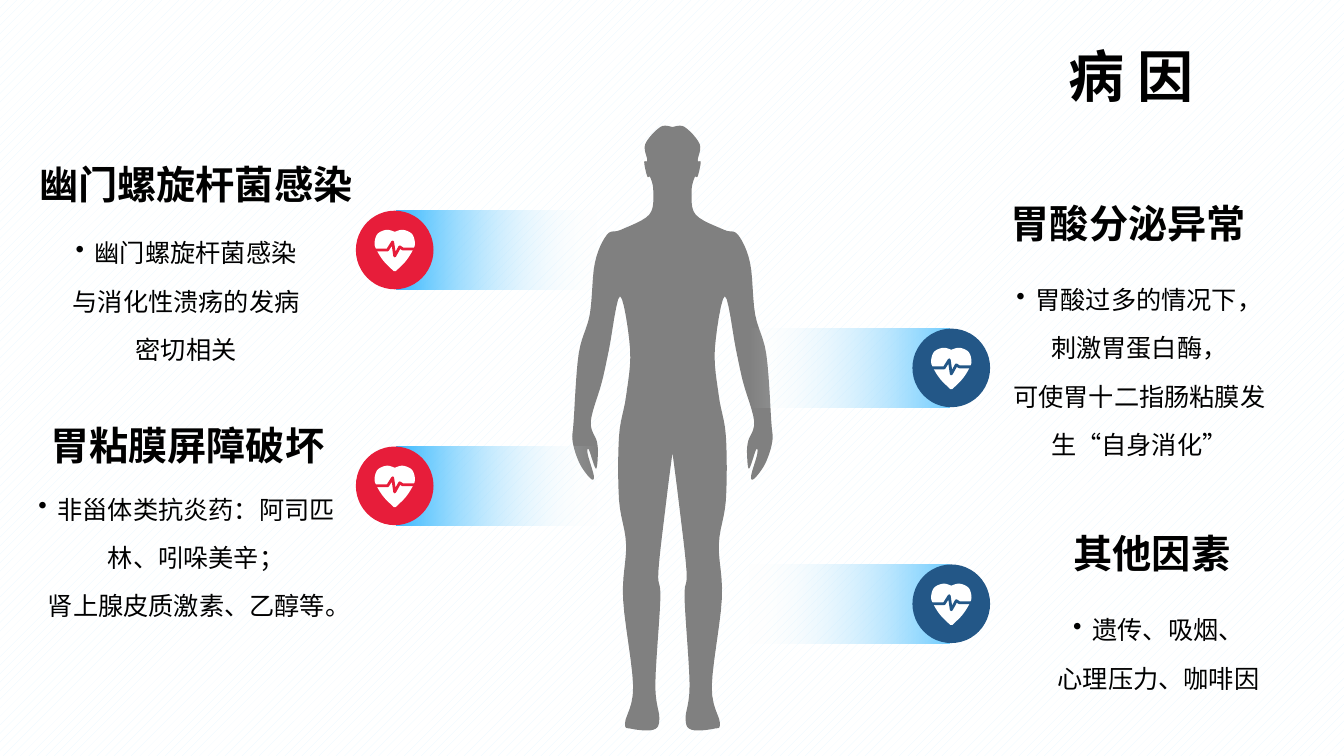
from pptx import Presentation
from pptx.dml.color import RGBColor
from pptx.enum.dml import MSO_PATTERN
from pptx.enum.shapes import MSO_SHAPE
from pptx.enum.text import MSO_ANCHOR, MSO_AUTO_SIZE, PP_ALIGN
from pptx.oxml.ns import qn
from pptx.util import Inches, Pt
from lxml import etree

RECT, OVAL = MSO_SHAPE.RECTANGLE, MSO_SHAPE.OVAL
TOP, BOTTOM = MSO_ANCHOR.TOP, MSO_ANCHOR.BOTTOM
LEFT, CENTER = PP_ALIGN.LEFT, PP_ALIGN.CENTER
CJK = "Noto Sans CJK SC"
COLORS = {"dots": "E7F7FF", "white": "FFFFFF", "text": "000000", "body": "808080",
          "left": "E71D3A", "right": "235787", "glow_left": "38B9FF",
          "glow_right": "71CDFF"}

# Right halves of symmetric outlines, in hundredths of an inch from the axis
HALF_FIGURE = [
    (0, 2), (12, 2), (27, 19), (25, 35), (28, 37), (25, 51), (22, 52), (19, 66),
    (23, 89), (51, 104), (65, 109), (77, 137), (82, 188), (93, 227), (98, 294),
    (99, 314), (92, 336), (81, 351), (78, 348), (84, 327), (83, 322), (76, 341),
    (74, 327), (75, 314), (81, 294), (70, 255), (63, 223), (52, 170), (42, 223),
    (46, 269), (53, 309), (53, 372), (46, 416), (49, 470), (39, 557), (47, 593),
    (41, 599), (19, 600), (13, 589), (17, 555), (12, 470), (14, 443), (6, 372),
    (0, 325)]
HALF_HEART = [(0, 2), (8, 0), (17, 4), (20, 13), (18, 20), (11, 31), (1, 41)]
PULSE = [(-20, 20), (-7, 20), (-2, 12), (0, 26), (5, 17), (8, 19), (20, 19)]

# Side, heading, heading box, heading alignment, paragraphs, paragraph box
CAUSES = [
    ("left", "幽门螺旋杆菌感染", (0.29, 1.37, 3.45, 0.74), LEFT,
     ["幽门螺旋杆菌感染", "与消化性溃疡的发病密切相关"], (0.52, 2.13, 2.65, 2.07)),
    ("right", "胃酸分泌异常", (9.27, 1.45, 3.84, 1.04), CENTER,
     ["胃酸过多的情况下，", "刺激胃蛋白酶，", "可使胃十二指肠粘膜发生“自身消化”"],
     (9.72, 2.59, 3.16, 2.12)),
    ("left", "胃粘膜屏障破坏", (0.4, 4.02, 3.58, 0.68), LEFT,
     ["非甾体类抗炎药：阿司匹林、吲哚美辛；", "肾上腺皮质激素、乙醇等。"],
     (0.27, 4.67, 3.16, 2.36)),
    ("right", "其他因素", (10.55, 4.21, 4.78, 1.56), LEFT,
     ["遗传、吸烟、", "心理压力、咖啡因"], (10.21, 5.87, 2.56, 1.2)),
]
FIRST_BAND, BAND_PITCH = 2.09, 1.17


def rgb(name):
    return RGBColor.from_string(COLORS[name])


def smooth(points, steps=6):
    """Catmull-Rom curve through the points."""
    ends = [points[0], *points, points[-1]]
    curve = [points[0]]
    for a, b, c, d in zip(ends, ends[1:], ends[2:], ends[3:]):
        for i in range(1, steps + 1):
            t = i / steps
            curve.append(tuple(
                q + t / 2 * (r - p + t * (2 * p - 5 * q + 4 * r - u
                                          + t * (3 * (q - r) + u - p)))
                for p, q, r, u in zip(a, b, c, d)))
    return curve


def paint(sp, color):
    sp.shadow.inherit = False
    sp.line.fill.background()
    if color:
        sp.fill.solid()
        sp.fill.fore_color.rgb = rgb(color)


def add_path(s, axis, top, points, close):
    placed = [(Inches(axis + x / 100), Inches(top + y / 100)) for x, y in points]
    builder = s.shapes.build_freeform(*placed[0])
    builder.add_line_segments(placed[1:], close=close)
    return builder.convert_to_shape()


def add_symmetric(s, axis, top, half, color):
    right = smooth(half)
    left = [(-x, y) for x, y in reversed(right)]
    paint(add_path(s, axis, top, right + left, True), color)


def add_marker(s, side, y):
    is_left = side == "left"
    strip_x, disc_x = (3.93, 3.53) if is_left else (7.42, 9.05)
    # Fading strip
    sp = s.shapes.add_shape(RECT, Inches(strip_x), Inches(y), Inches(2), Inches(0.78))
    paint(sp, None)
    sp.fill.gradient()
    sp.fill.gradient_angle = 0
    stops = list(sp.fill.gradient_stops)
    glow, clear = stops if is_left else reversed(stops)
    glow.color.rgb = rgb("glow_" + side)
    clear.color.rgb = rgb("white")
    for color in sp._element.iter(qn("a:srgbClr")):
        if color.get("val") == COLORS["white"]:
            etree.SubElement(color, qn("a:alpha")).set("val", "0")
    # Disc with a heart and its pulse
    disc = s.shapes.add_shape(OVAL, Inches(disc_x), Inches(y), Inches(0.77), Inches(0.78))
    paint(disc, side)
    axis, top = disc_x + 0.385, y + 0.19
    add_symmetric(s, axis, top, HALF_HEART, "white")
    pulse = add_path(s, axis, top, PULSE, False)
    pulse.shadow.inherit = False
    pulse.fill.background()
    pulse.line.color.rgb = rgb(side)
    pulse.line.width = Pt(2)


def write(sp, box, lines, size, font, bold=False, align=LEFT, anchor=TOP):
    sp.left, sp.top, sp.width, sp.height = map(Inches, box)
    tf = sp.text_frame
    tf.word_wrap, tf.auto_size, tf.vertical_anchor = True, MSO_AUTO_SIZE.NONE, anchor
    tf.text = "\n".join(lines)
    for p in tf.paragraphs:
        p.alignment = align
        p.font.size, p.font.name, p.font.bold = Pt(size), font, bold
        p.font.color.rgb = rgb("text")
        for r in p.runs:
            etree.SubElement(r._r.get_or_add_rPr(), qn("a:ea")).set("typeface", CJK)
    return tf


def add_cause(s, band_y, side, heading, heading_box, align, lines, text_box):
    add_marker(s, side, band_y)
    sp = s.shapes.add_textbox(0, 0, 0, 0)
    tf = write(sp, text_box, lines, 18, CJK, align=CENTER)
    for p in tf.paragraphs:
        p.line_spacing = 1.6
    # Bullet on the first paragraph
    pPr = tf.paragraphs[0]._p.get_or_add_pPr()
    pPr.set("marL", str(Inches(0.19)))
    pPr.set("indent", str(-Inches(0.19)))
    bullet = etree.Element(qn("a:buChar"), char="•")
    pPr.find(qn("a:lnSpc")).addnext(bullet)
    sp = s.shapes.add_textbox(0, 0, 0, 0)
    write(sp, heading_box, [heading], 28, "Arial", True, align, BOTTOM)


def main():
    prs = Presentation()
    prs.slide_width, prs.slide_height = Inches(13.33), Inches(7.5)
    s = prs.slides.add_slide(prs.slide_layouts[5])
    # Dotted background
    fill = s.background.fill
    fill.patterned()
    fill.pattern = MSO_PATTERN.PERCENT_20
    fill.fore_color.rgb, fill.back_color.rgb = rgb("dots"), rgb("white")
    # Title, figure and the four causes
    write(s.shapes.title, (10.5, 0.36, 2.24, 0.77), ["病 因"], 40, CJK, True)
    add_symmetric(s, 6.67, 1.24, HALF_FIGURE, "body")
    for i, cause in enumerate(CAUSES):
        add_cause(s, FIRST_BAND + i * BAND_PITCH, *cause)
    prs.save("out.pptx")


if __name__ == "__main__":
    main()
